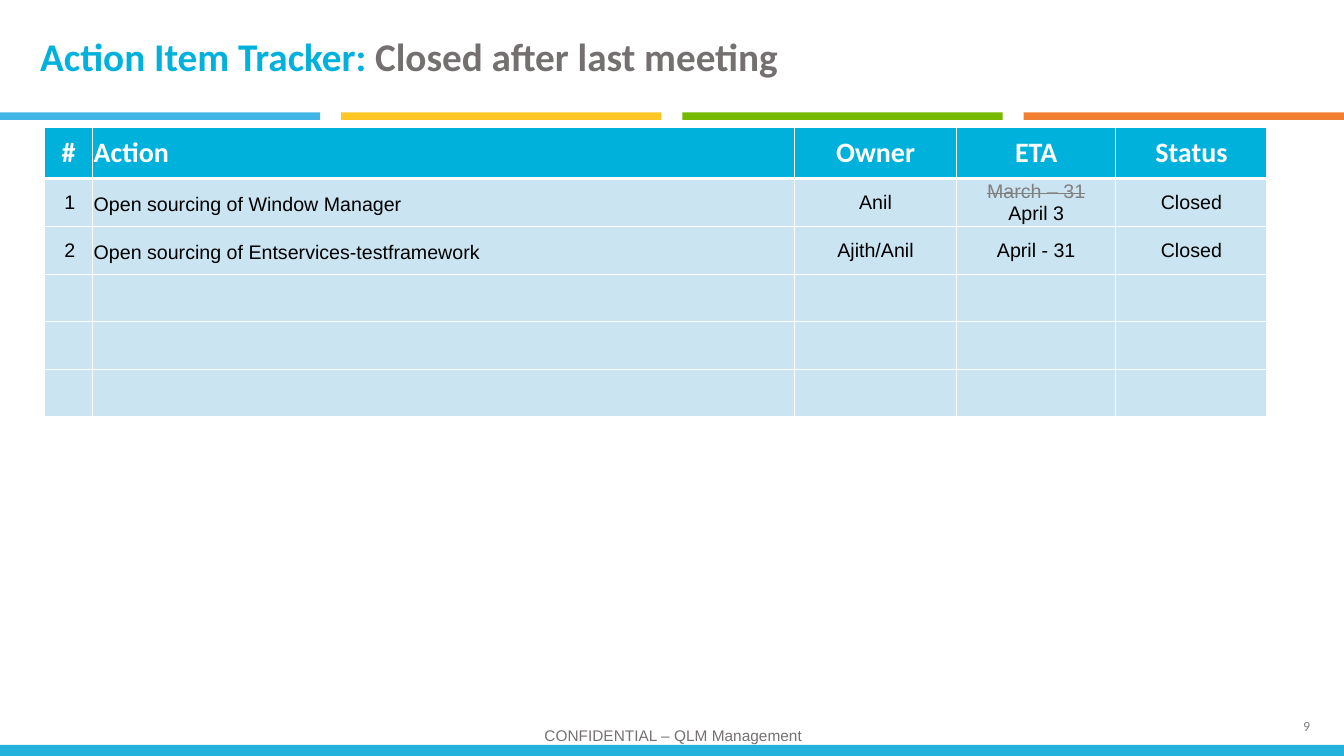
from pptx import Presentation
from pptx.util import Cm, Pt
from pptx.dml.color import RGBColor
from pptx.enum.shapes import MSO_SHAPE
from pptx.enum.text import PP_ALIGN, MSO_ANCHOR
from pptx.oxml import parse_xml
from pptx.oxml.ns import nsdecls


def paint(fill, tone):
    fill.solid()
    fill.fore_color.rgb = RGBColor.from_string(tone)


def write(para, text, size, face, tone, bold=False):
    run = para.add_run()
    run.text = text
    run.font.size = Pt(size)
    run.font.name = face
    run.font.bold = bold
    paint(run.font.fill, tone)
    return run


deck = Presentation()
deck.slide_width, deck.slide_height = Cm(33.87), Cm(19.05)
slide = deck.slides.add_slide(deck.slide_layouts[5])
shapes = slide.shapes

# Footer bar and the four colour strips
bars = [(0, 18.77, 33.87, 0.28, "22B2DB")]
for i, tone in enumerate(["42B4E6", "FFC726", "76B900", "F27E32"]):
    bars.append((8.6 * i, 2.83, 8.07, 0.19, tone))
for left, top, width, height, tone in bars:
    bar = shapes.add_shape(MSO_SHAPE.RECTANGLE, Cm(left), Cm(top), Cm(width), Cm(height))
    bar.shadow.inherit = False
    bar.line.fill.background()
    paint(bar.fill, tone)

# Page number
box = shapes.add_textbox(Cm(32.59), Cm(17.96), Cm(0.94), Cm(0.69))
box.text_frame.word_wrap = False
write(box.text_frame.paragraphs[0], "9", 10, "Calibri", "808080")

# Footer text
box = shapes.add_textbox(Cm(11.33), Cm(18.26), Cm(11.28), Cm(0.64))
frame = box.text_frame
frame.word_wrap = True
frame.vertical_anchor = MSO_ANCHOR.MIDDLE
para = frame.paragraphs[0]
para.alignment = PP_ALIGN.CENTER
para.line_spacing = 0.8
write(para, "CONFIDENTIAL – QLM Management", 11, "Arial", "767171")

# Title
title = shapes.title
title.left, title.top, title.width, title.height = Cm(0.76), Cm(0.18), Cm(31.8), Cm(2.44)
title.text_frame.vertical_anchor = MSO_ANCHOR.MIDDLE
para = title.text_frame.paragraphs[0]
para.alignment = PP_ALIGN.LEFT
write(para, "Action Item Tracker: ", 28, "Calibri", "00B2DB", True)
write(para, "Closed after last meeting", 28, "Calibri", "757070", True)

# Action table: a cell holds one line of text per paragraph
rows = [
    ["#", "Action", "Owner", "ETA", "Status"],
    ["1", "Open sourcing of Window Manager", "Anil", "March – 31\nApril 3", "Closed"],
    ["2", "Open sourcing of Entservices-testframework", "Ajith/Anil", "April - 31", "Closed"],
] + [[""] * 5] * 3
late = "March – 31"
widths = [1.22, 17.68, 4.09, 4.01, 3.81]
table = shapes.add_table(len(rows), len(widths), Cm(1.12), Cm(3.2), Cm(30.81), Cm(7.3)).table
table.horz_banding = False
for col, width in zip(table.columns, widths):
    col.width = Cm(width)

for r, row in enumerate(rows):
    head = r == 0
    table.rows[r].height = Cm(1.3 if head else 1.2)
    for c, text in enumerate(row):
        cell = table.cell(r, c)
        cell.vertical_anchor = MSO_ANCHOR.MIDDLE
        cell.margin_left = Cm(0.5 if c == 0 and not head else 0.02)
        cell.margin_right = cell.margin_top = Cm(0.02)
        cell.margin_bottom = 0

        # White borders, thick under the header
        for side in "LRTB":
            thick = (r, side) in [(0, "B"), (1, "T")]
            cell._tc.get_or_add_tcPr().append(parse_xml(
                f'<a:ln{side} {nsdecls("a")} w="{Pt(3 if thick else 1)}"><a:solidFill>'
                f'<a:srgbClr val="FFFFFF"/></a:solidFill></a:ln{side}>'))
        paint(cell.fill, "00B2DB" if head else "CBE4F1")

        for n, line in enumerate(text.split("\n") if text else []):
            frame = cell.text_frame
            para = frame.add_paragraph() if n else frame.paragraphs[0]
            if c > 1 or (head and c == 0):
                para.alignment = PP_ALIGN.CENTER
            if head:
                write(para, line, 20, "Calibri", "FFFFFF", True)
                continue
            if c == 1:
                para.line_spacing = 1.15
                para.space_after = Pt(8)
            run = write(para, line, 14, "Arial", "808080" if line == late else "000000")
            if line == late:
                run.font._element.set("strike", "sngStrike")

deck.save("out.pptx")
